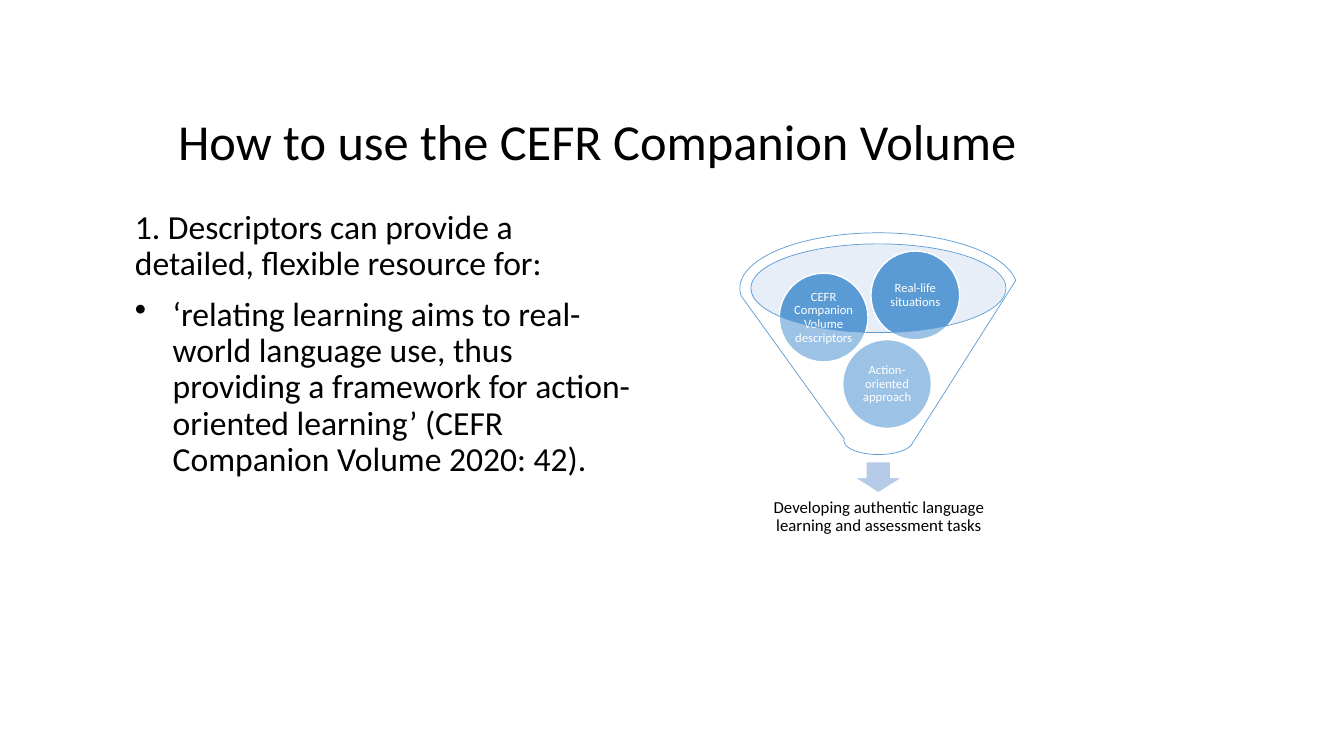
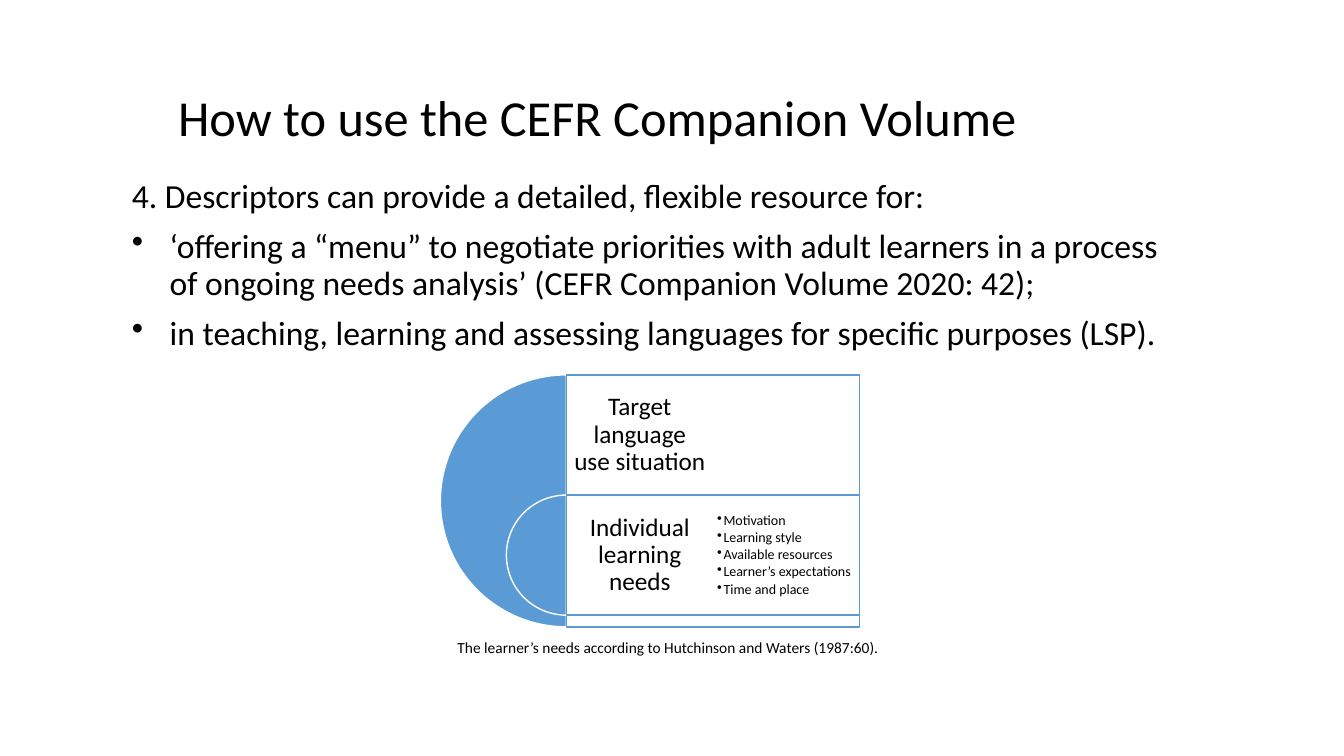
from lxml import etree
from pptx import Presentation
from pptx.dml.color import RGBColor
from pptx.enum import shapes, text
from pptx.oxml import ns
from pptx.util import Pt

BLACK = RGBColor(0x00, 0x00, 0x00)
WHITE = RGBColor(0xFF, 0xFF, 0xFF)
BLUE = RGBColor(0x5B, 0x9B, 0xD5)
ARROW_BLUE = RGBColor(0xB5, 0xCB, 0xE7)
RIM_BLUE = RGBColor(0xC4, 0xD5, 0xEB)
FONT = "Calibri"
KIND = shapes.MSO_SHAPE
LEFT, CENTER = text.PP_ALIGN.LEFT, text.PP_ALIGN.CENTER
TOP, MIDDLE, BOTTOM = text.MSO_ANCHOR.TOP, text.MSO_ANCHOR.MIDDLE, text.MSO_ANCHOR.BOTTOM


def draw(slide, kind, box, fill, line=None, width=1, opacity=100):
    figure = slide.shapes.add_shape(kind, *map(Pt, box))
    figure.shadow.inherit = False
    figure.fill.solid()
    figure.fill.fore_color.rgb = fill
    if opacity < 100:
        color = figure._element.spPr.find(ns.qn("a:solidFill"))[0]
        etree.SubElement(color, ns.qn("a:alpha"), val=str(opacity * 1000))
    if line is None:
        figure.line.fill.background()
    else:
        figure.line.color.rgb = line
        figure.line.width = Pt(width)
    return figure


def write(target, lines, size, color=BLACK, align=LEFT, anchor=TOP, margins=(7.2, 3.6),
          spacing=0.9, gap=0, indent=0, first_bullet=0):
    frame = target.text_frame
    frame.text = "\n".join(lines)
    frame.word_wrap = True
    frame.auto_size = text.MSO_AUTO_SIZE.NONE
    frame.vertical_anchor = anchor
    frame.margin_left = frame.margin_right = Pt(margins[0])
    frame.margin_top = frame.margin_bottom = Pt(margins[1])
    for number, paragraph in enumerate(frame.paragraphs):
        if indent and number >= first_bullet:
            properties = paragraph._p.get_or_add_pPr()
            properties.set("marL", str(Pt(indent)))
            properties.set("indent", str(-Pt(indent)))
            etree.SubElement(properties, ns.qn("a:buChar"), char="•")
        paragraph.alignment = align
        paragraph.line_spacing = spacing
        paragraph.space_before = Pt(gap if number else 0)
        for run in paragraph.runs:
            run.font.name = FONT
            run.font.size = Pt(size)
            run.font.color.rgb = color


deck = Presentation()
deck.slide_width, deck.slide_height = Pt(960), Pt(540)

pages = [
    (51, (89.3, 146.9, 369.4, 286.6), [
        "1. Descriptors can provide a detailed, flexible resource for:",
        "‘relating learning aims to real-world language use, thus providing a framework for "
        "action-oriented learning’ (CEFR Companion Volume 2020: 42).",
    ]),
    (33.8, (87.1, 124.6, 765.4, 318.2), [
        "4. Descriptors can provide a detailed, flexible resource for:",
        "‘offering a “menu” to negotiate priorities with adult learners in a process of "
        "ongoing needs analysis’ (CEFR Companion Volume 2020: 42);",
        "in teaching, learning and assessing languages for specific purposes (LSP).",
    ]),
]
for title_top, body_box, body_lines in pages:
    slide = deck.slides.add_slide(deck.slide_layouts[5])
    title = slide.shapes.title
    title.left, title.top, title.width, title.height = map(Pt, (120, title_top, 720, 75))
    write(title, ["How to use the CEFR Companion Volume"], 36, anchor=BOTTOM)
    body = slide.shapes.add_textbox(*map(Pt, body_box))
    write(body, body_lines, 24, gap=10, indent=27, first_bullet=1)

funnel_slide, needs_slide = deck.slides

draw(funnel_slide, KIND.OVAL, (535.7, 174.2, 182.2, 63.4), RIM_BLUE, opacity=40)
draw(funnel_slide, KIND.DOWN_ARROW, (609.8, 329.8, 35.3, 22.3), ARROW_BLUE, WHITE)
outcome = funnel_slide.shapes.add_textbox(*map(Pt, (542.9, 347.8, 169.9, 42.5)))
write(outcome, ["Developing authentic language learning and assessment tasks"], 12,
      align=CENTER, anchor=MIDDLE, margins=(6.5, 6.5))
ingredients = [
    ("Action-oriented approach", 601.9, 242.6),
    ("CEFR Companion Volume descriptors", 556.6, 195.1),
    ("Real-life situations", 622.1, 179.3),
]
for label, left, top in ingredients:
    ingredient = draw(funnel_slide, KIND.OVAL, (left, top, 63.4, 63.4), BLUE, WHITE)
    write(ingredient, [label], 9, WHITE, CENTER, MIDDLE, (0.7, 0.7))
draw(funnel_slide, KIND.FUNNEL, (528.5, 166.3, 198, 158.4), WHITE, BLUE, 0.5, 40)

axis, needs_top, row_height, half_width = 404.6, 267.8, 85.8, 104.8
needs = [("Target language use situation", 180), ("Individual learning needs", row_height)]
for row, (label, diameter) in enumerate(needs):
    top = needs_top + row * row_height
    arc = draw(needs_slide, KIND.PIE, (axis - diameter / 2, top, diameter, diameter), BLUE, WHITE)
    arc.adjustments[0], arc.adjustments[1] = 54, 162
    draw(needs_slide, KIND.RECTANGLE, (axis, top, 2 * half_width, diameter), WHITE, BLUE, opacity=90)
    need = needs_slide.shapes.add_textbox(*map(Pt, (axis, top, half_width, row_height)))
    write(need, [label], 18, align=CENTER, anchor=MIDDLE, margins=(5, 5))

factors = needs_slide.shapes.add_textbox(
    *map(Pt, (axis + half_width, needs_top + row_height, half_width, row_height)))
write(factors, ["Motivation", "Learning style", "Available resources", "Learner’s expectations",
                "Time and place"], 10, anchor=MIDDLE, margins=(2.9, 2.9), gap=1.5, indent=4.5)

caption = needs_slide.shapes.add_textbox(*map(Pt, (319.7, 452.2, 321.1, 20.9)))
write(caption, ["The learner’s needs according to Hutchinson and Waters (1987:60)."], 11, spacing=1)
caption.text_frame.word_wrap = False

deck.save("out.pptx")
